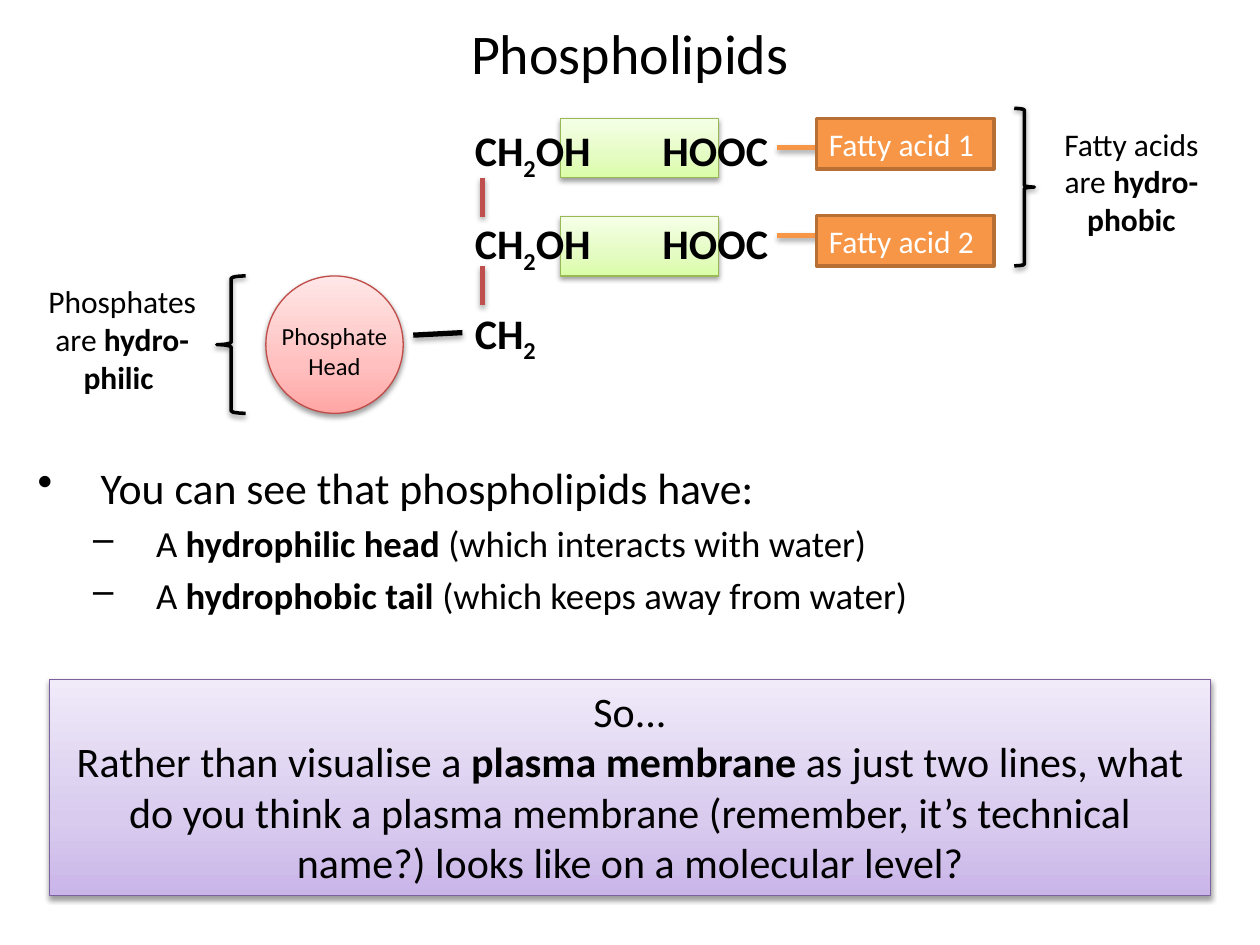
from dataclasses import dataclass

import pptx
import pptx.dml.color
import pptx.enum.shapes
import pptx.enum.text
import pptx.oxml.ns
import pptx.util
from lxml import etree

Inches = pptx.util.Inches
Pt = pptx.util.Pt
qn = pptx.oxml.ns.qn
SHAPE = pptx.enum.shapes.MSO_SHAPE
ALIGN = pptx.enum.text.PP_ALIGN
ANCHOR = pptx.enum.text.MSO_ANCHOR


@dataclass(frozen=True)
class Theme:
    font: str = "Calibri"
    black: str = "000000"
    white: str = "FFFFFF"
    orange: str = "F79646"
    orange_edge: str = "B76F34"
    red: str = "C0504D"
    # Gradient colours from bottom to top, then the outline
    green: tuple = ("DAFDA7", "E4FCC2", "F5FFE7", "98B955")
    pink: tuple = ("FFA6A5", "FFC0BF", "FFE7E7", "BF4C48")
    purple: tuple = ("C9B5E8", "D8CBEE", "F0EAF9", "7D60A0")
    title: int = 32
    bullet: int = 25
    formula: int = 24
    sub_bullet: int = 21
    label: int = 18
    small: int = 14


def rgb(colour):
    return pptx.dml.color.RGBColor.from_string(colour)


def add_xml(parent, tag, **attributes):
    return etree.SubElement(parent, qn(tag), {k: str(v) for k, v in attributes.items()})


class SlideBuilder:
    def __init__(self, slide, theme):
        self.slide = slide
        self.theme = theme

    def fill_text(self, frame, paragraphs, size, colour=None, align=ALIGN.CENTER,
                  bold=False, subscript=False):
        """Fill the frame; text between bars is bold, or lowered if subscript."""
        frame.word_wrap = True
        for i, text in enumerate(paragraphs):
            paragraph = frame.paragraphs[0] if i == 0 else frame.add_paragraph()
            paragraph.alignment = align
            font = paragraph.font
            font.name, font.size = self.theme.font, Pt(size)
            font.color.rgb = rgb(colour or self.theme.black)
            if bold:
                font.bold = True
            for j, part in enumerate(text.split("|")):
                if not part:
                    continue
                run = paragraph.add_run()
                run.text = part
                if j % 2 and subscript:
                    run._r.get_or_add_rPr().set("baseline", "-25000")
                elif j % 2:
                    run.font.bold = True

    def text(self, box, paragraphs, size, anchor=ANCHOR.TOP, **style):
        frame = self.slide.shapes.add_textbox(*map(Inches, box)).text_frame
        frame.vertical_anchor = anchor
        self.fill_text(frame, paragraphs, size, **style)
        return frame

    def formula(self, left, top, text):
        self.text((left, top, 1.33, 0.5), [text], self.theme.formula,
                  align=ALIGN.LEFT, bold=True, subscript=True)

    def bullets(self, box, items):
        """Items are (level, text) pairs."""
        frame = self.text(box, [text for _, text in items], self.theme.bullet,
                          align=ALIGN.LEFT)
        levels = [("•", 0.5, self.theme.bullet), ("–", 0.94, self.theme.sub_bullet)]
        for i, (paragraph, (level, _)) in enumerate(zip(frame.paragraphs, items)):
            mark, margin, size = levels[level]
            paragraph.level = level
            paragraph.font.size = Pt(size)
            paragraph.space_before = Pt(size * 0.2 if i else 0)
            properties = paragraph._p.get_or_add_pPr()
            properties.set("marL", str(Inches(margin)))
            properties.set("indent", str(Inches(-0.5)))
            bullet = properties.makeelement(qn("a:buChar"), {"char": mark})
            properties.find(qn("a:defRPr")).addprevious(bullet)

    def shadow(self, effects, distance, opacity):
        outer = add_xml(effects, "a:outerShdw", blurRad=Pt(3.1), dist=Pt(distance),
                        dir=90 * 60000, rotWithShape=0)
        colour = add_xml(outer, "a:srgbClr", val=self.theme.black)
        add_xml(colour, "a:alpha", val=opacity * 1000)

    def shape(self, kind, box, edge, width, shadowed=True):
        shape = self.slide.shapes.add_shape(kind, *map(Inches, box))
        shape.shadow.inherit = False
        shape.fill.background()
        shape.line.color.rgb = rgb(edge)
        shape.line.width = Pt(width)
        if shadowed:
            self.shadow(shape._element.spPr.find(qn("a:effectLst")), 1.6, 38)
        return shape

    def gradient_shape(self, kind, box, colours):
        *stops, edge = colours
        shape = self.shape(kind, box, edge, 0.75)
        shape.fill.gradient()
        shape.fill.gradient_angle = 90
        stop_list = next(shape._element.spPr.iter(qn("a:gsLst")))
        for stop in list(stop_list):
            stop_list.remove(stop)
        for position, colour in zip((0, 35, 100), stops):
            stop = add_xml(stop_list, "a:gs", pos=position * 1000)
            add_xml(stop, "a:srgbClr", val=colour)
        return shape

    def fatty_acid(self, top, text):
        acid = self.shape(SHAPE.RECTANGLE, (6.48, top, 1.41, 0.4),
                          self.theme.orange_edge, 2, shadowed=False)
        acid.fill.solid()
        acid.fill.fore_color.rgb = rgb(self.theme.orange)
        acid.text_frame.vertical_anchor = ANCHOR.TOP
        self.fill_text(acid.text_frame, [text], self.theme.label,
                       colour=self.theme.white, align=ALIGN.LEFT)

    def bond(self, start, end, colour):
        bond = self.slide.shapes.add_connector(
            pptx.enum.shapes.MSO_CONNECTOR.STRAIGHT, *map(Inches, start + end))
        bond.line.color.rgb = rgb(colour)
        bond.line.width = Pt(3)
        self.shadow(add_xml(bond._element.spPr, "a:effectLst"), 1.8, 35)


def main():
    presentation = pptx.Presentation()
    presentation.slide_width, presentation.slide_height = Inches(10), Inches(7.5)
    theme = Theme()
    builder = SlideBuilder(
        presentation.slides.add_slide(presentation.slide_layouts[6]), theme)

    builder.text((0.5, 0.22, 9, 0.38), ["Phospholipids"], theme.title, ANCHOR.MIDDLE)
    builder.bullets((0.2, 3.61, 9.61, 1.5), [
        (0, "You can see that phospholipids have:"),
        (1, "A |hydrophilic head| (which interacts with water)"),
        (1, "A |hydrophobic tail |(which keeps away from water)"),
    ])

    # Glycerol rows with their fatty acids: highlight, formula, bond and acid tops
    rows = [(0.94, 0.94, 1.17, 0.94), (1.72, 1.68, 1.87, 1.71)]
    for number, (highlight, formula, bond, acid) in enumerate(rows, 1):
        builder.gradient_shape(SHAPE.RECTANGLE, (4.45, highlight, 1.25, 0.47), theme.green)
        builder.formula(5.16, formula, "HOOC")
        builder.bond((6.17, bond), (6.72, bond), theme.orange)
        builder.formula(3.67, formula, "CH|2|OH")
        builder.fatty_acid(acid, f"Fatty acid {number}")
    builder.formula(3.67, 2.39, "CH|2|")
    for top in (1.41, 2.11):
        builder.bond((3.83, top), (3.83, top + 0.31), theme.red)

    builder.gradient_shape(SHAPE.OVAL, (2.11, 2.19, 1.09, 1.09), theme.pink)
    builder.text((2.03, 2.5, 1.25, 0.57), ["Phosphate", "Head"], theme.small)
    builder.bond((3.67, 2.64), (3.28, 2.66), theme.black)

    builder.shape(SHAPE.LEFT_BRACE, (1.72, 2.19, 0.23, 1.09), theme.black, 2)
    builder.text((0.23, 2.19, 1.48, 1.01), ["Phosphates are |hydro-philic |"], theme.label)
    builder.shape(SHAPE.RIGHT_BRACE, (8.05, 0.86, 0.16, 1.25), theme.black, 2)
    builder.text((8.2, 0.94, 1.56, 1.01), ["Fatty acids are |hydro-phobic|"], theme.label)

    question = builder.gradient_shape(SHAPE.RECTANGLE, (0.39, 5.39, 9.22, 1.72), theme.purple)
    question.text_frame.vertical_anchor = ANCHOR.TOP
    builder.fill_text(question.text_frame, [
        "So...",
        "Rather than visualise a |plasma membrane |as just two lines, what do you think "
        "a plasma membrane (remember, it’s technical name?) looks like on a molecular level?",
    ], theme.formula)

    presentation.save("out.pptx")


if __name__ == "__main__":
    main()
